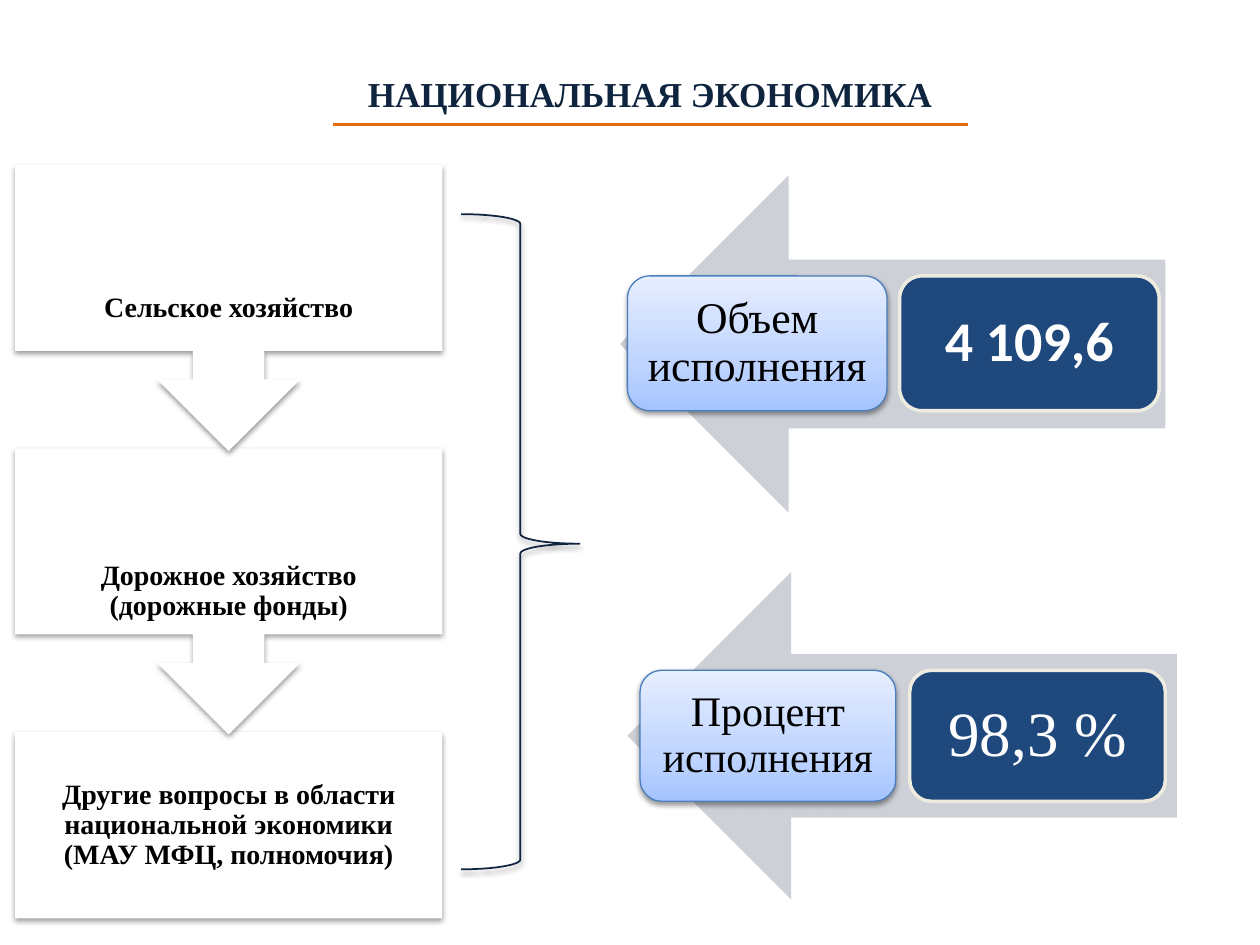
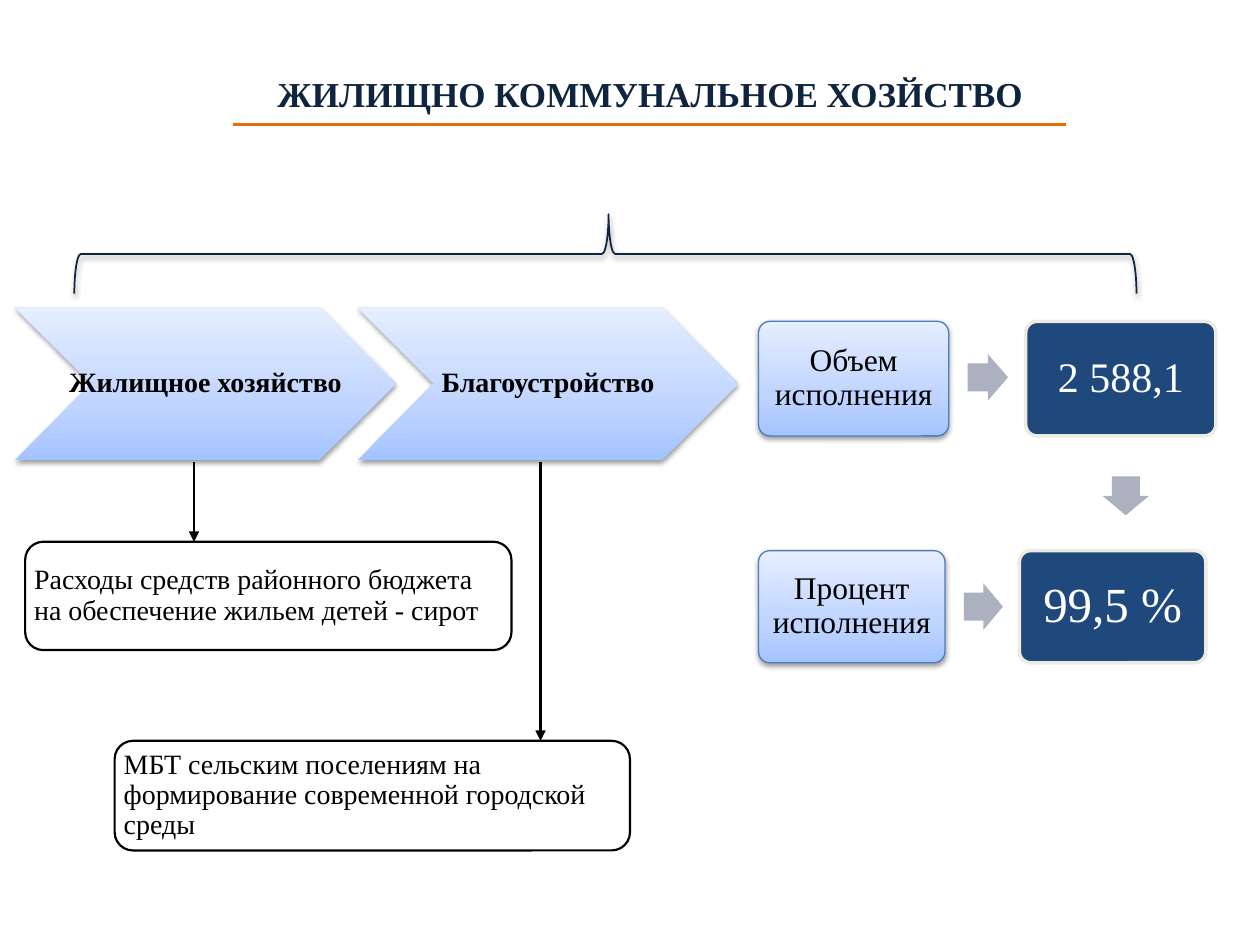
from lxml import etree
from pptx import Presentation
from pptx.dml.color import RGBColor
from pptx.enum import shapes, text
from pptx.oxml import ns
from pptx.util import Inches, Pt

SERIF = "Times New Roman"
NAVY, ORANGE, BLACK, WHITE = "0F243E", "E46C0A", "000000", "FFFFFF"
BLUE, CREAM, EDGE = "1F497D", "EEECE1", "4B7EBC"
PALE, GREY = "CDD0D7", "ACB1BF"
GRAD = [(0, "A4C4FF"), (35, "BFD4FF"), (100, "E6EEFF")]
KIND = shapes.MSO_SHAPE

TITLES = [("НАЦИОНАЛЬНАЯ ЭКОНОМИКА", 2.64, 7.68),
          ("ЖИЛИЩНО КОММУНАЛЬНОЕ ХОЗЙСТВО", 1.85, 8.46)]
STEPS = ["Сельское хозяйство", "Дорожное хозяйство (дорожные фонды)",
         "Другие вопросы в области национальной экономики (МАУ МФЦ, полномочия)"]
BIG = [
    dict(arrow=(4.92, 1.39, 4.33, 2.68), box=(4.98, 2.19, 2.06, 1.07), step=2.16,
         label="Объем исполнения", size=25, value="4 109,6", high=32,
         face="Calibri", bold=True),
    dict(arrow=(4.98, 4.54, 4.36, 2.6), box=(5.08, 5.32, 2.03, 1.04), step=2.14,
         label="Процент исполнения", size=24, value="98,3 %", high=36),
]
SMALL = [
    dict(arrow=(7.68, 2.81, 0.32, 0.37), box=(6.02, 2.55, 1.51, 0.91), step=2.12,
         label="Объем исполнения", size=18, value="2 588,1", high=24),
    dict(arrow=(7.65, 4.63, 0.31, 0.37), box=(6.02, 4.37, 1.48, 0.89), step=2.07,
         label="Процент исполнения", size=18, value="99,5 %", high=28),
]
AREAS = ["Жилищное хозяйство", "Благоустройство"]
NOTES = [(1.54, (0.2, 4.3, 3.86, 0.86),
          "Расходы средств районного бюджета на обеспечение жильем детей - сирот"),
         (4.29, (0.91, 5.88, 4.09, 0.87),
          "МБТ сельским поселениям на формирование современной городской среды")]


def color(code):
    return RGBColor.from_string(code)


def node(parent, tag, **attrs):
    return etree.SubElement(parent, ns.qn("a:" + tag), attrs)


def shade(part):
    glow = part._element.spPr.find(ns.qn("a:effectLst"))
    drop = node(glow, "outerShdw", blurRad="39370", dist="20320",
                dir="5400000", rotWithShape="0")
    node(node(drop, "srgbClr", val=BLACK), "alpha", val="38000")


def blend(part):
    part.fill.gradient()
    part.fill.gradient_angle = 90
    stops = part._element.spPr.find(".//" + ns.qn("a:gsLst"))
    for old in list(stops):
        stops.remove(old)
    for place, code in GRAD:
        node(node(stops, "gs", pos=str(place * 1000)), "srgbClr", val=code)


def draw(slide, kind, box, fill=None, edge=None, width=1, adj=(), shadow=False):
    part = slide.shapes.add_shape(kind, *map(Inches, box))
    for i, num in enumerate(adj):
        part.adjustments[i] = num
    if fill is GRAD:
        blend(part)
    elif fill:
        part.fill.solid()
        part.fill.fore_color.rgb = color(fill)
    else:
        part.fill.background()
    if edge:
        part.line.color.rgb = color(edge)
        part.line.width = Pt(width)
    else:
        part.line.fill.background()
    part.shadow.inherit = False
    if shadow:
        shade(part)
    return part


def write(part, words, size, ink=BLACK, bold=False, face=SERIF,
          align=text.PP_ALIGN.CENTER, pad=0.05, space=0.9):
    frame = part.text_frame
    frame.word_wrap = True
    frame.vertical_anchor = text.MSO_ANCHOR.MIDDLE
    frame.margin_left = frame.margin_right = Inches(pad)
    frame.margin_top = frame.margin_bottom = Inches(0.05)
    frame.text = words
    para = frame.paragraphs[0]
    para.alignment = align
    para.line_spacing = space
    font = para.runs[0].font
    font.name, font.size, font.bold = face, Pt(size), bold
    font.color.rgb = color(ink)


def label(slide, box, words, size, **style):
    write(slide.shapes.add_textbox(*map(Inches, box)), words, size, **style)


def link(slide, start, end, ink, width, head=False):
    line = slide.shapes.add_connector(shapes.MSO_CONNECTOR.STRAIGHT,
                                      *map(Inches, start + end))
    line.line.color.rgb = color(ink)
    line.line.width = Pt(width)
    if head:
        node(line.line._get_or_add_ln(), "tailEnd", type="triangle")
    node(line._element.spPr, "effectLst")


def start(deck, words, left, right):
    slide = deck.slides.add_slide(deck.slide_layouts[6])
    label(slide, (2.01, 0.52, 6.3, 0.44), words, 20, ink=NAVY, bold=True, space=1)
    link(slide, (left, 0.99), (right, 0.99), ORANGE, 1.5)
    return slide


def brace(slide, box, turn=0):
    part = draw(slide, KIND.RIGHT_BRACE, box, edge=NAVY, adj=(0.083, 0.503), shadow=True)
    part.rotation = turn


def pair(slide, row, kind, fill, adj=(), curve=0.167):
    draw(slide, kind, row["arrow"], fill, adj=adj)
    left, top, wide, tall = row["box"]
    name = draw(slide, KIND.ROUNDED_RECTANGLE, row["box"], GRAD, EDGE, 0.75,
                (curve,), True)
    write(name, row["label"], row["size"])
    value = draw(slide, KIND.ROUNDED_RECTANGLE, (left + row["step"], top, wide, tall),
                 BLUE, CREAM, 2, (curve,))
    write(value, row["value"], row["high"], ink=WHITE,
          bold=row.get("bold", False), face=row.get("face", SERIF))


def economy(deck):
    slide = start(deck, *TITLES[0])
    for row in BIG:
        pair(slide, row, KIND.LEFT_ARROW, PALE)
    for i, words in reversed(list(enumerate(STEPS))):
        last = i == len(STEPS) - 1
        kind = KIND.RECTANGLE if last else KIND.DOWN_ARROW_CALLOUT
        box = (0.12, 1.31 + 2.25 * i, 3.39, 1.48 if last else 2.27)
        draw(slide, kind, box, WHITE, shadow=True)
        label(slide, box, words, 16, bold=True, pad=0.12)
    brace(slide, (3.66, 1.7, 0.94, 5.2))


def housing(deck):
    slide = start(deck, *TITLES[1])
    for row in SMALL:
        pair(slide, row, KIND.RIGHT_ARROW, GREY, (0.6, 0.5), 0.1)
    draw(slide, KIND.DOWN_ARROW, (8.75, 3.78, 0.37, 0.31), GREY, adj=(0.6, 0.5))
    for i, words in enumerate(AREAS):
        box = (0.12 + 2.72 * i, 2.44, 3.02, 1.21)
        draw(slide, KIND.CHEVRON, box, GRAD, shadow=True)
        label(slide, box, words, 16, bold=True)
    for x, box, words in NOTES:
        link(slide, (x, 3.67), (x, box[1]), BLACK, 1.25, True)
        note = draw(slide, KIND.ROUNDED_RECTANGLE, box, WHITE, BLACK, 1.25)
        write(note, words, 16, align=text.PP_ALIGN.LEFT, pad=0.03)
    brace(slide, (4.49, -2.2, 0.63, 8.43), 270)


def main():
    deck = Presentation()
    deck.slide_width, deck.slide_height = Inches(10), Inches(7.5)
    economy(deck)
    housing(deck)
    deck.save("out.pptx")


if __name__ == "__main__":
    main()
